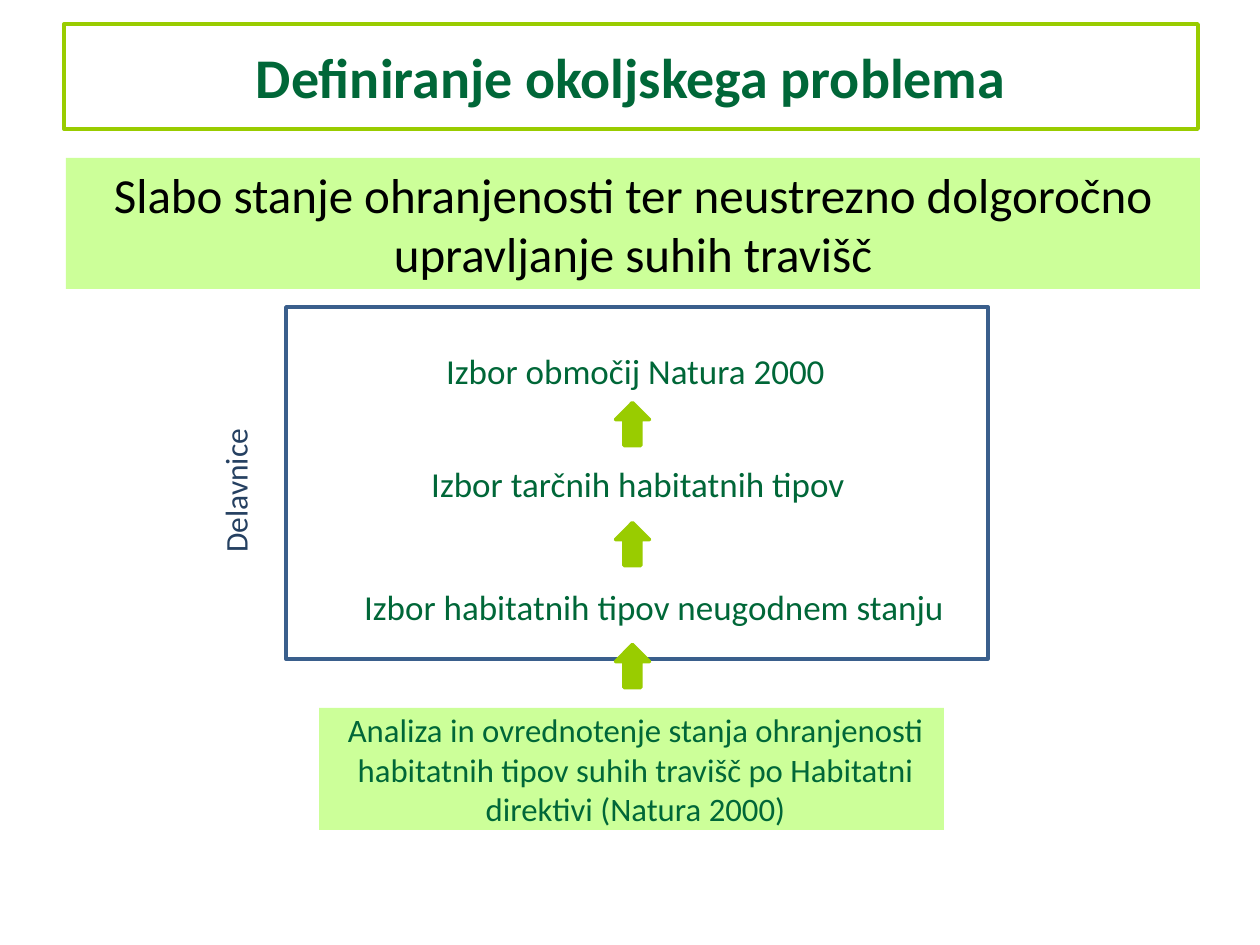
from pptx import Presentation
from pptx.dml.color import RGBColor
from pptx.enum.shapes import MSO_SHAPE
from pptx.enum.text import MSO_ANCHOR, PP_ALIGN
from pptx.util import Pt

RECT, ARROW = MSO_SHAPE.RECTANGLE, MSO_SHAPE.RIGHT_ARROW
TOP, MIDDLE = MSO_ANCHOR.TOP, MSO_ANCHOR.MIDDLE
LEFT, CENTER = PP_ALIGN.LEFT, PP_ALIGN.CENTER
PX = 914400 / 126
INDENT = 8
COLORS = {"green": "006738", "lime": "99CC00", "pale": "CCFF99",
          "blue": "3A5F8C", "navy": "254061", "black": "000000"}

deck = Presentation()
deck.slide_width, deck.slide_height = int(1260 * PX), int(945 * PX)
slide = deck.slides.add_slide(deck.slide_layouts[6])


def add_box(kind, spot, fill=None, line=None, width=2):
    box = slide.shapes.add_shape(kind, *[int(n * PX) for n in spot])
    box.shadow.inherit = False
    if fill:
        box.fill.solid()
        box.fill.fore_color.rgb = RGBColor.from_string(COLORS[fill])
    else:
        box.fill.background()
    if line:
        box.line.color.rgb = RGBColor.from_string(COLORS[line])
        box.line.width = Pt(width)
    else:
        box.line.fill.background()
    return box


def put_text(box, text, size, color="green", anchor=MIDDLE, align=CENTER,
             indent=0, bold=False, wrap=True):
    frame = box.text_frame
    frame.text = text
    frame.word_wrap = wrap
    frame.vertical_anchor = anchor
    para = frame.paragraphs[0]
    para.alignment = align
    if indent:
        para._p.get_or_add_pPr().set("marL", str(int(indent * PX)))
    font = para.runs[0].font
    font.name, font.size, font.bold = "Calibri", Pt(size), bold
    font.color.rgb = RGBColor.from_string(COLORS[color])


# Workshop frame
add_box(RECT, (286, 307, 702, 352), line="blue")

# Title
title = add_box(RECT, (64, 24, 1134, 105), line="lime", width=2.25)
put_text(title, "Definiranje okoljskega problema", 32, bold=True)

# Analysis at the base
base = add_box(RECT, (319, 708, 625, 122), fill="pale")
put_text(base, "Analiza in ovrednotenje stanja ohranjenosti habitatnih tipov "
         "suhih travišč po Habitatni direktivi (Natura 2000)", 18.7,
         indent=INDENT)

# Problem statement
issue = add_box(RECT, (66, 158, 1134, 131), fill="pale")
put_text(issue, "Slabo stanje ohranjenosti ter neustrezno dolgoročno "
         "upravljanje suhih travišč", 28, color="black", anchor=TOP)

# Selection steps, each with the arrow that leads up to it
steps = [
    ("Izbor območij Natura 2000", (319, 335, 625, 72), 407),
    ("Izbor tarčnih habitatnih tipov", (270, 454, 728, 58), 527),
    ("Izbor habitatnih tipov neugodnem stanju", (286, 581, 728, 52), 649),
]
for text, spot, top in steps:
    step = slide.shapes.add_textbox(*[int(n * PX) for n in spot])
    put_text(step, text, 20, indent=INDENT)
    arrow = add_box(ARROW, (611, top, 43, 34), fill="lime", line="lime")
    arrow.rotation = 270

# Side label
label = slide.shapes.add_textbox(*[int(n * PX) for n in (156, 461, 158, 50)])
label.rotation = 270
put_text(label, "Delavnice", 18, color="navy", anchor=TOP, align=LEFT,
         wrap=False)

deck.save("out.pptx")
